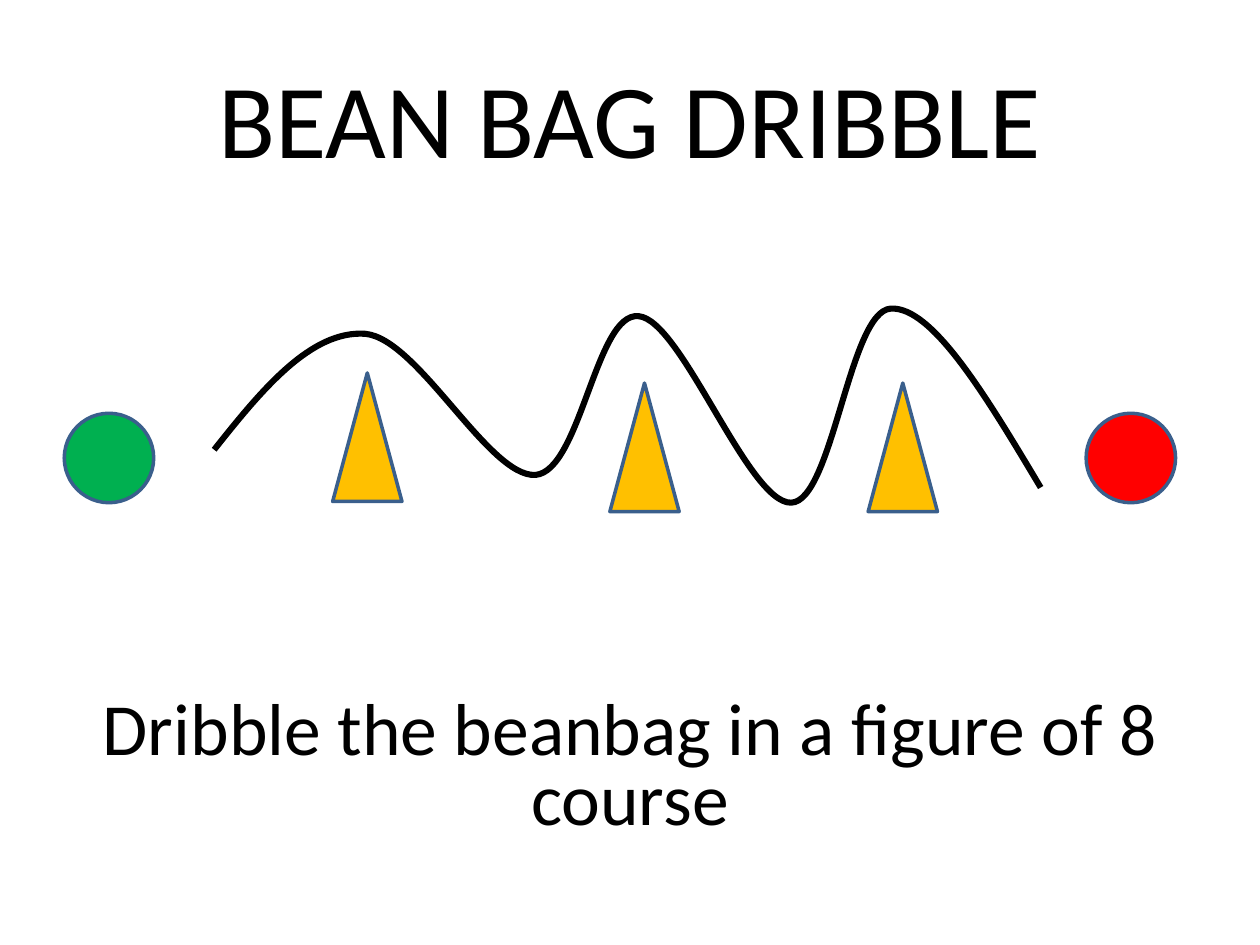
from lxml.etree import SubElement
from pptx import Presentation
from pptx.dml.color import RGBColor
from pptx.enum.shapes import MSO_SHAPE as Preset
from pptx.enum.text import MSO_ANCHOR as Anchor, PP_ALIGN as Align
from pptx.oxml.ns import qn
from pptx.util import Inches, Pt

GREEN, RED, AMBER = "00B050", "FF0000", "FFC000"
BLACK, OUTLINE = "000000", "3A5F8C"
BALL_SIZE = 0.71
CONE_WIDTH, CONE_HEIGHT = 0.55, 1.02

# Start of the route, then two control points and an end point per curve
ROUTE_START = (1.7, 3.57)
ROUTE_CURVES = [
    [(2.08, 3.09), (2.47, 2.62), (2.9, 2.65)],
    [(3.32, 2.69), (3.88, 3.79), (4.25, 3.77)],
    [(4.61, 3.74), (4.73, 2.47), (5.07, 2.51)],
    [(5.41, 2.54), (5.94, 4), (6.28, 3.99)],
    [(6.61, 3.98), (6.74, 2.47), (7.07, 2.45)],
    [(7.4, 2.43), (7.83, 3.15), (8.26, 3.87)],
]


def color(hex_string):
    return RGBColor.from_string(hex_string)


def add_text(page, left, top, width, height, text, size, spacing=1.0):
    box = page.shapes.add_textbox(Inches(left), Inches(top), Inches(width), Inches(height))
    frame = box.text_frame
    frame.word_wrap = True
    frame.vertical_anchor = Anchor.MIDDLE
    para = frame.paragraphs[0]
    para.alignment = Align.CENTER
    para.line_spacing = spacing
    span = para.add_run()
    span.text = text
    span.font.name = "Calibri"
    span.font.size = Pt(size)
    span.font.color.rgb = color(BLACK)


def add_marker(page, preset, left, top, width, height, fill):
    marker = page.shapes.add_shape(
        preset, Inches(left), Inches(top), Inches(width), Inches(height))
    marker.shadow.inherit = False
    marker.fill.solid()
    marker.fill.fore_color.rgb = color(fill)
    marker.line.color.rgb = color(OUTLINE)
    marker.line.width = Pt(2)


def add_route(page, start, curves):
    builder = page.shapes.build_freeform(Inches(start[0]), Inches(start[1]))
    points = [(Inches(x), Inches(y)) for curve in curves for x, y in curve]
    builder.add_line_segments(points, close=False)
    route = builder.convert_to_shape()
    route.shadow.inherit = False
    route.fill.background()
    route.line.color.rgb = color(BLACK)
    route.line.width = Pt(3.5)

    # Turn each three straight segments into one Bezier curve
    outline = next(route._element.iter(qn("a:path")))
    segments = outline.findall(qn("a:lnTo"))
    for first in range(0, len(segments), 3):
        bezier = SubElement(outline, qn("a:cubicBezTo"))
        for segment in segments[first:first + 3]:
            bezier.append(segment[0])
            outline.remove(segment)


def add_course(page):
    # Start and finish
    for left, fill in ((0.51, GREEN), (8.62, RED)):
        add_marker(page, Preset.OVAL, left, 3.28, BALL_SIZE, BALL_SIZE, fill)
    # Cones
    for left, top in ((2.64, 2.96), (4.84, 3.04), (6.89, 3.04)):
        add_marker(page, Preset.ISOSCELES_TRIANGLE, left, top,
                   CONE_WIDTH, CONE_HEIGHT, AMBER)
    # Path between the cones
    add_route(page, ROUTE_START, ROUTE_CURVES)


def main():
    deck = Presentation()
    deck.slide_width, deck.slide_height = Inches(10), Inches(7.5)
    page = deck.slides.add_slide(deck.slide_layouts[6])
    add_text(page, 0.5, 0.3, 9, 1.25, "BEAN BAG DRIBBLE", 60)
    add_course(page)
    add_text(page, 0, 5.48, 10, 1.25,
             "Dribble the beanbag in a figure of 8 course", 42, spacing=0.8)
    deck.save("out.pptx")


if __name__ == "__main__":
    main()
